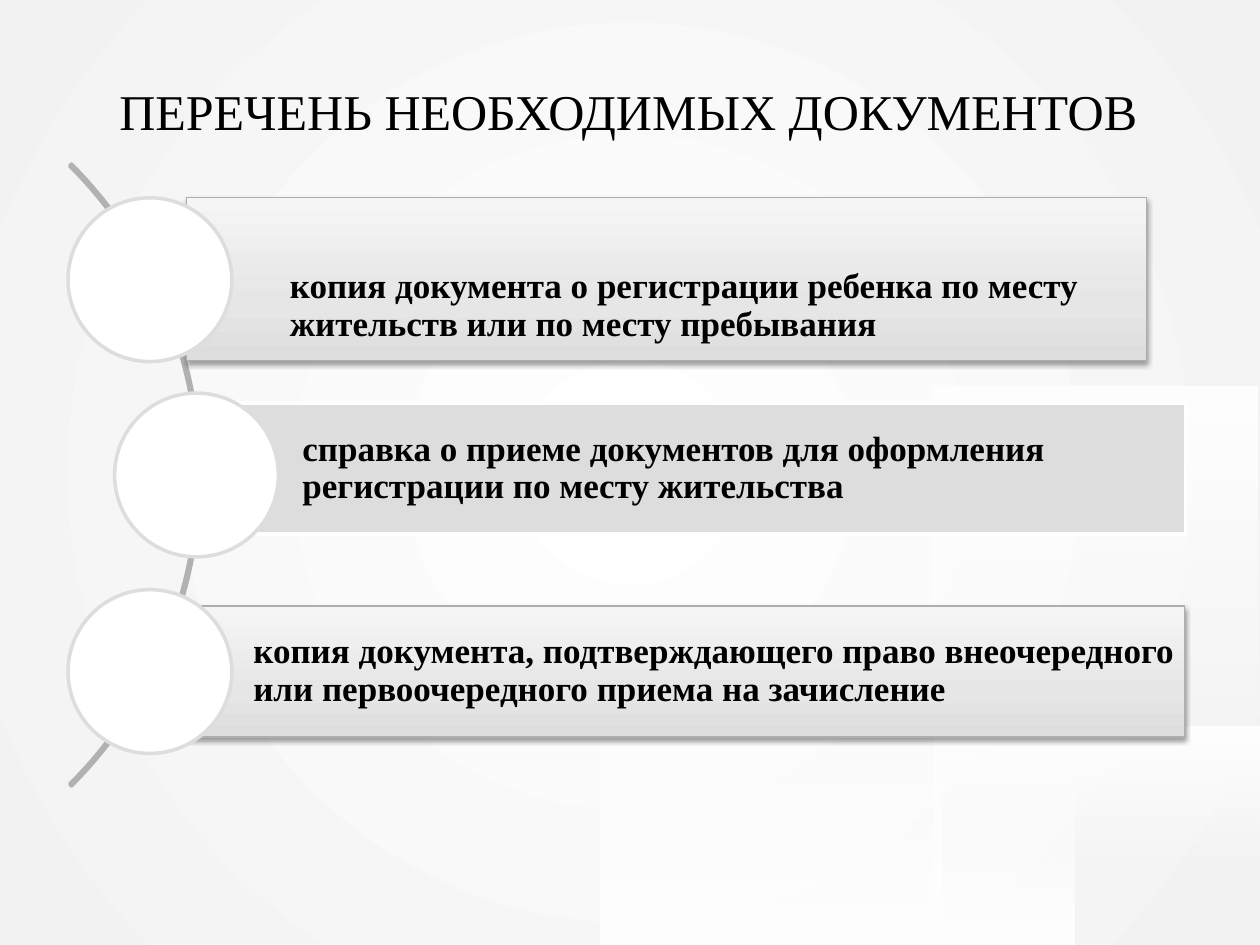
from lxml.etree import SubElement
from pptx import Presentation
from pptx.dml.color import RGBColor
from pptx.enum.shapes import MSO_SHAPE
from pptx.enum.text import MSO_ANCHOR, PP_ALIGN
from pptx.oxml.ns import qn
from pptx.util import Inches, Pt

FONT = "Times New Roman"
COLORS = {
    "white": "FFFFFF",
    "edge": "F2F2F2",
    "text": "000000",
    "arc": "B1B1B1",
    "bar": "DDDDDD",
    "bar_middle": "E6E6E6",
    "bar_light": "F5F5F5",
    "bar_line": "AEAEAE",
}
BAR_STOPS = [(0, "bar", 100), (35, "bar_middle", 100), (100, "bar_light", 100)]
GLOW_STOPS = [(0, "white", 100), (100, "white", 0)]
PAGE_STOPS = [(0, "white", 100), (100, "edge", 100)]
GLOWS = [
    ((7.11, 6.09, 1.72, 1.11), 270, 0),
    ((7.42, 5.77, 2.58, 1.11), 0, 90),
    ((7.4, 3.07, 2.58, 2.71), 180, 270),
    ((4.83, 4.85, 2.58, 2.71), 90, 180),
]
ROWS = [
    ("копия документа о регистрации ребенка по месту жительств или по месту пребывания",
     (1.48, 1.57, 7.62, 1.29), (0.54, 1.57), True, 0.49),
    ("справка о приеме документов для оформления регистрации по месту жительства",
     (1.58, 3.2, 7.83, 1.04), (0.91, 3.12), False, 0.06),
    ("копия документа, подтверждающего право внеочередного или первоочередного приема на зачисление",
     (1.19, 4.81, 8.21, 1.04), (0.54, 4.68), True, 0.06),
]


def rgb(name):
    return RGBColor.from_string(COLORS[name])


def add_color(parent, name, opacity):
    color = SubElement(parent, qn("a:srgbClr"), val=COLORS[name])
    if opacity < 100:
        SubElement(color, qn("a:alpha"), val=str(opacity * 1000))


def add_shadow(effects, opacity, blur, distance, angle):
    shadow = SubElement(effects, qn("a:outerShdw"), blurRad=str(Pt(blur)),
                        dist=str(Pt(distance)), dir=str(angle * 60000), rotWithShape="0")
    add_color(shadow, "text", opacity)


def fill_gradient(shape, stops, angle=None):
    shape.fill.background()
    properties = shape.element.spPr
    empty = properties.find(qn("a:noFill"))
    gradient = SubElement(properties, qn("a:gradFill"), rotWithShape="1")
    properties.replace(empty, gradient)
    stop_list = SubElement(gradient, qn("a:gsLst"))
    for position, name, opacity in stops:
        add_color(SubElement(stop_list, qn("a:gs"), pos=str(position * 1000)), name, opacity)
    if angle is None:
        circle = SubElement(gradient, qn("a:path"), path="circle")
        SubElement(circle, qn("a:fillToRect"), l="50000", t="50000", r="50000", b="50000")
    else:
        SubElement(gradient, qn("a:lin"), ang=str(angle * 60000), scaled="0")


def add_shape(page, kind, box, fill=None, line=None, width=2):
    shape = page.shapes.add_shape(kind, *map(Inches, box))
    shape.shadow.inherit = False
    if fill:
        shape.fill.solid()
        shape.fill.fore_color.rgb = rgb(fill)
    else:
        shape.fill.background()
    if line:
        shape.line.color.rgb = rgb(line)
        shape.line.width = Pt(width)
    else:
        shape.line.fill.background()
    return shape


def write(shape, text, size, insets, align, bold=False):
    frame = shape.text_frame
    frame.word_wrap = True
    frame.vertical_anchor = MSO_ANCHOR.MIDDLE
    frame.margin_left, frame.margin_top, frame.margin_right, frame.margin_bottom = map(Inches, insets)
    para = frame.paragraphs[0]
    para.alignment = align
    span = para.add_run()
    span.text = text
    para.font.name = FONT
    para.font.size = Pt(size)
    para.font.bold = bold
    para.font.color.rgb = rgb("text")
    return para, span


def add_background(page, box):
    fill_gradient(add_shape(page, MSO_SHAPE.RECTANGLE, box), PAGE_STOPS)
    for glow_box, rotation, angle in GLOWS:
        glow = add_shape(page, MSO_SHAPE.RECTANGLE, glow_box)
        glow.rotation = rotation
        fill_gradient(glow, GLOW_STOPS, angle)


def add_title(page, box):
    title = page.shapes.add_textbox(*map(Inches, box))
    para, span = write(title, "ПЕРЕЧЕНЬ НЕОБХОДИМЫХ ДОКУМЕНТОВ", 28.6,
                       (0.1, 0.05, 0.1, 0.05), PP_ALIGN.CENTER)
    span.font.color.rgb = rgb("text")
    effects = SubElement(span.font._element, qn("a:effectLst"))
    add_shadow(effects, 40, 3, 3, 45)


def add_arc(page, box):
    arc = add_shape(page, MSO_SHAPE.BLOCK_ARC, box, line="arc")
    for index, value in enumerate((189, 27, 0.003)):
        arc.adjustments[index] = value


def add_row(page, box, text, circle_corner, raised, top_inset):
    if raised:
        bar = add_shape(page, MSO_SHAPE.RECTANGLE, box, line="bar_line", width=0.75)
        fill_gradient(bar, BAR_STOPS, 270)
        add_shadow(bar.element.spPr.find(qn("a:effectLst")), 38, 3.1, 1.6, 90)
    else:
        bar = add_shape(page, MSO_SHAPE.RECTANGLE, box, fill="bar", line="white")
    label = page.shapes.add_textbox(*map(Inches, box))
    para, span = write(label, text, 20, (0.82, top_inset, 0.06, 0.06), PP_ALIGN.LEFT, True)
    para.line_spacing = 0.9
    add_shape(page, MSO_SHAPE.OVAL, (*circle_corner, 1.3, 1.3), fill="white", line="bar")


def main():
    deck = Presentation()
    deck.slide_width, deck.slide_height = Inches(10), Inches(7.5)
    page = deck.slides.add_slide(deck.slide_layouts[6])
    add_background(page, (0, 0, 10, 7.5))
    add_title(page, (0.47, 0.45, 9.03, 0.86))
    add_arc(page, (-5.39, 0.28, 6.98, 6.98))
    for text, box, circle_corner, raised, top_inset in ROWS:
        add_row(page, box, text, circle_corner, raised, top_inset)
    deck.save("out.pptx")


if __name__ == "__main__":
    main()
